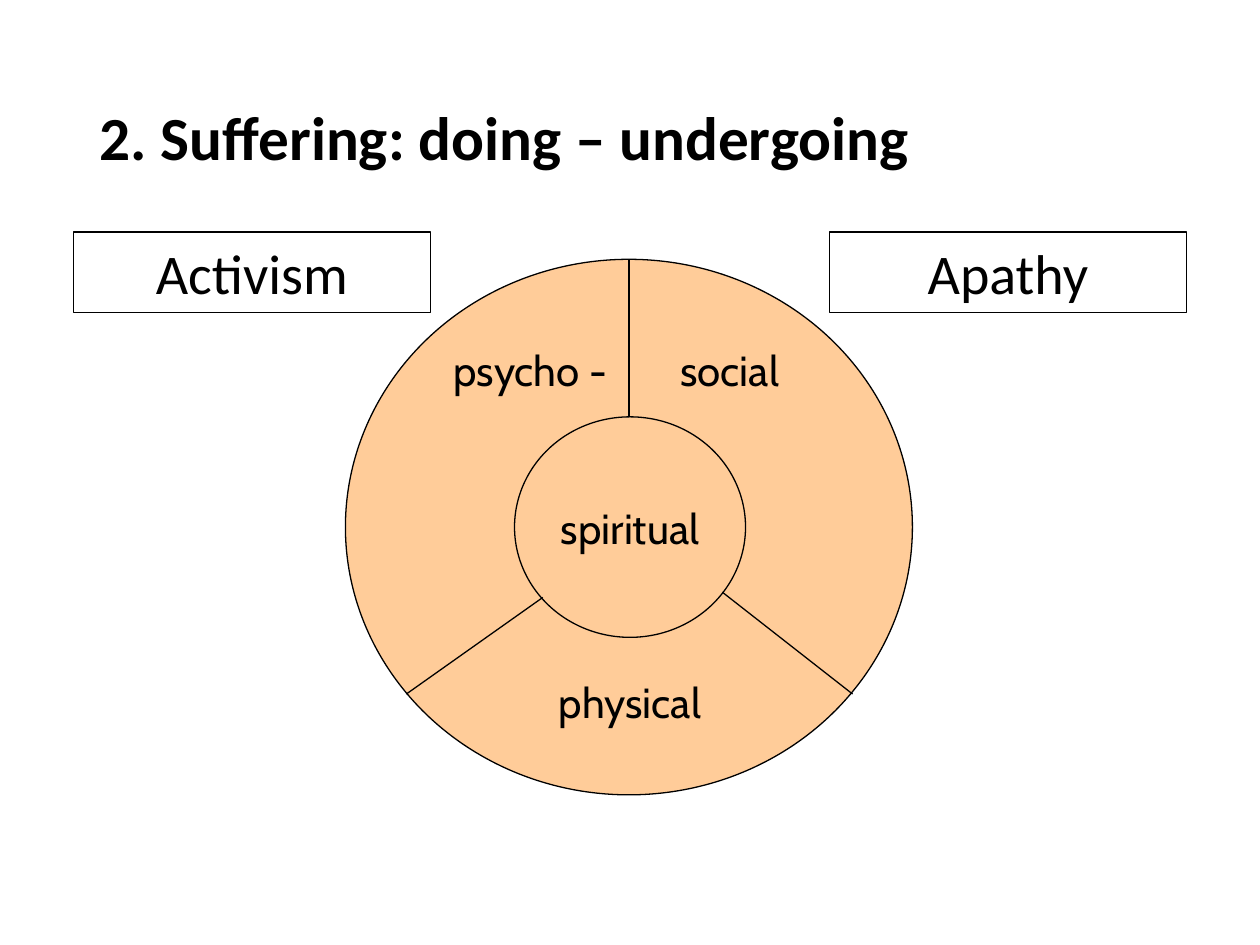
"""Build a slide with a wheel of suffering set between activism and apathy."""
from lxml.etree import SubElement
from pptx import Presentation
from pptx.dml.color import RGBColor
from pptx.enum.shapes import MSO_CONNECTOR, MSO_SHAPE
from pptx.enum.text import MSO_ANCHOR, PP_ALIGN
from pptx.oxml.ns import qn
from pptx.util import Inches, Pt

BLACK = RGBColor(0, 0, 0)
PEACH = RGBColor(0xFF, 0xCC, 0x99)

deck = Presentation()
deck.slide_width, deck.slide_height = Inches(10), Inches(7.5)
UNIT = deck.slide_width / 120
slide = deck.slides.add_slide(deck.slide_layouts[5])
shapes = slide.shapes


def grid(*cells):
    return [round(cell * UNIT) for cell in cells]


def write(shape, text, font, size, align=PP_ALIGN.CENTER, bold=False):
    frame = shape.text_frame
    frame.word_wrap = True
    para = frame.paragraphs[0]
    para.alignment = align
    run = para.add_run()
    run.text = text
    run.font.name = font
    run.font.size = Pt(size)
    run.font.bold = bold
    run.font.color.rgb = BLACK
    return frame


for cells in [(32.9, 24.7, 54, 51), (49, 39.7, 22, 21)]:
    ring = shapes.add_shape(MSO_SHAPE.OVAL, *grid(*cells))
    ring.shadow.inherit = False
    ring.fill.solid()
    ring.fill.fore_color.rgb = PEACH
    ring.line.color.rgb = BLACK
    ring.line.width = Pt(0.75)

spokes = [
    (59.9, 24.7, 59.9, 39.7),
    (68.8, 56.4, 81.2, 66.1),
    (51.7, 56.9, 38.7, 66.1),
]
for ends in spokes:
    spoke = shapes.add_connector(MSO_CONNECTOR.STRAIGHT, *grid(*ends))
    spoke.line.color.rgb = BLACK
    spoke.line.width = Pt(0.75)
    SubElement(spoke._element.spPr, qn("a:effectLst"))

labels = [
    ("spiritual", 49.5, 47.3, 21),
    ("physical", 50.5, 63.8, 19),
    ("social", 60.5, 32.2, 18),
    ("psycho -", 41, 32.2, 19),
]
for text, left, top, width in labels:
    label = shapes.add_textbox(*grid(left, top, width, 6))
    write(label, text, "Cabin", 24)

for text, left in [("Activism", 7), ("Apathy", 79)]:
    box = shapes.add_shape(MSO_SHAPE.RECTANGLE, *grid(left, 22.1, 34, 7.7))
    box.shadow.inherit = False
    box.fill.background()
    box.line.color.rgb = BLACK
    box.line.width = Pt(0.75)
    frame = write(box, text, "Calibri", 32)
    frame.vertical_anchor = MSO_ANCHOR.TOP

title = shapes.title
title.left, title.top, title.width, title.height = grid(8.3, 4.7, 103.4, 17.4)
frame = write(title, "2. Suffering: doing – undergoing", "Calibri", 35, PP_ALIGN.LEFT, True)
frame.vertical_anchor = MSO_ANCHOR.MIDDLE
frame.paragraphs[0].line_spacing = 0.9

deck.save("out.pptx")
